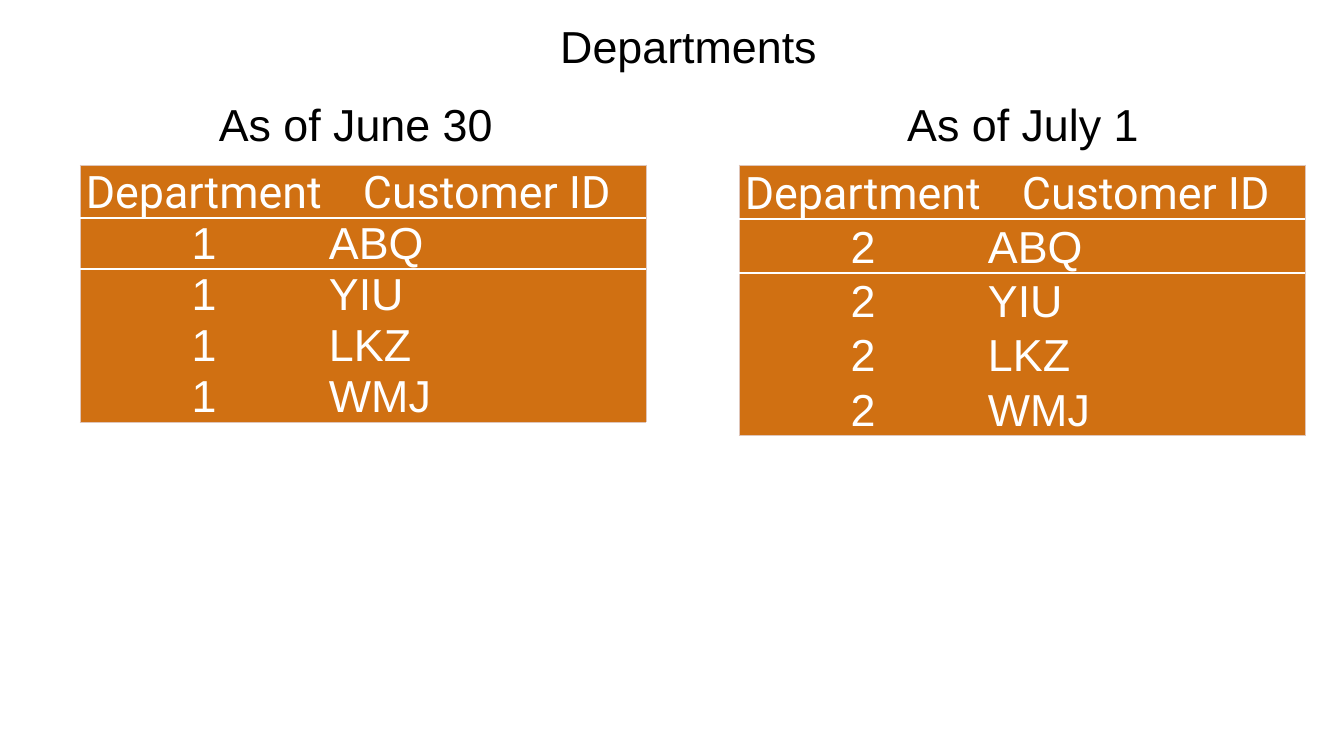
import pptx
import pptx.util
import pptx.dml.color
import pptx.enum.text
import pptx.oxml
import pptx.oxml.ns
from dataclasses import dataclass

SCALE = 914400 / 100.8  # EMU in one px
ALIGN = pptx.enum.text.PP_ALIGN


@dataclass(frozen=True)
class Theme:
    fill: str = "D07012"
    white: str = "FFFFFF"
    black: str = "000000"
    edge: str = "DFC5B9"
    head: str = "Roboto"
    body: str = "Arial"
    size: int = 32
    lead: float = 0.9


THEME = Theme()


def px(num):
    return pptx.util.Emu(round(num * SCALE))


def rgb(code):
    return pptx.dml.color.RGBColor.from_string(code)


def write(frame, text, font, color, align):
    para = frame.paragraphs[0]
    para.alignment = align
    para.line_spacing = THEME.lead
    run = para.add_run()
    run.text = text
    run.font.name = font
    run.font.size = pptx.util.Pt(THEME.size)
    run.font.color.rgb = rgb(color)


def label(slide, text, left, top, width, height):
    frame = slide.shapes.add_textbox(px(left), px(top), px(width), px(height)).text_frame
    frame.word_wrap = False
    frame.auto_size = pptx.enum.text.MSO_AUTO_SIZE.SHAPE_TO_FIT_TEXT
    write(frame, text, THEME.body, THEME.black, ALIGN.RIGHT)


def border(cell, sides):
    # Lines come before the fill, in the order left, right, top, bottom
    props = cell._tc.get_or_add_tcPr()
    for spot, side in enumerate("LRTB"):
        color, points = sides.get(side, (None, 0))
        paint = f'<a:solidFill><a:srgbClr val="{color}"/></a:solidFill>' if color else "<a:noFill/>"
        line = pptx.oxml.parse_xml(
            f'<a:ln{side} {pptx.oxml.ns.nsdecls("a")} w="{int(points * 12700)}">{paint}</a:ln{side}>')
        props.insert(spot, line)


def edges(row, col, last):
    outer, inner = (THEME.edge, 0.75), (THEME.white, 1)
    sides = {"R" if col else "L": outer}
    if row == 0:
        sides["T"] = outer
    elif row <= 2:
        sides["T"] = inner
    if row <= 1:
        sides["B"] = inner
    elif row == last:
        sides["B"] = outer
    return sides


def grid(slide, rows, left, top, widths, heights):
    table = slide.shapes.add_table(
        len(rows), len(widths), px(left), px(top), px(sum(widths)), px(sum(heights))).table
    table.first_row = table.horz_banding = False
    for col, width in enumerate(widths):
        table.columns[col].width = px(width)
    for row, texts in enumerate(rows):
        table.rows[row].height = px(heights[row])
        for col, text in enumerate(texts):
            cell = table.cell(row, col)
            cell.margin_left = cell.margin_right = cell.margin_top = px(1)
            cell.margin_bottom = 0
            cell.vertical_anchor = pptx.enum.text.MSO_ANCHOR.BOTTOM
            cell.fill.solid()
            cell.fill.fore_color.rgb = rgb(THEME.fill)
            border(cell, edges(row, col, len(rows) - 1))
            font = THEME.body if row else THEME.head
            align = ALIGN.LEFT if row and col else ALIGN.CENTER
            write(cell.text_frame, text, font, THEME.white, align)


def main():
    deck = pptx.Presentation()
    deck.slide_width, deck.slide_height = px(1344), px(756)
    slide = deck.slides.add_slide(deck.slide_layouts[6])

    # Title
    label(slide, "Departments", 548, 20, 279, 59)

    # Each side: heading, its left and width, department, table left, row heights
    names = ["ABQ", "YIU", "LKZ", "WMJ"]
    parts = [
        ("As of June 30", 207, 296, "1", 80, [53] + [51] * 4),
        ("As of July 1", 895, 254, "2", 739, [54] * 4 + [55]),
    ]
    for text, left, width, dept, start, heights in parts:
        label(slide, text, left, 98, width, 59)
        rows = [("Department", "Customer ID")] + [(dept, name) for name in names]
        grid(slide, rows, start, 165, [248, 318], heights)

    deck.save("out.pptx")


if __name__ == "__main__":
    main()
